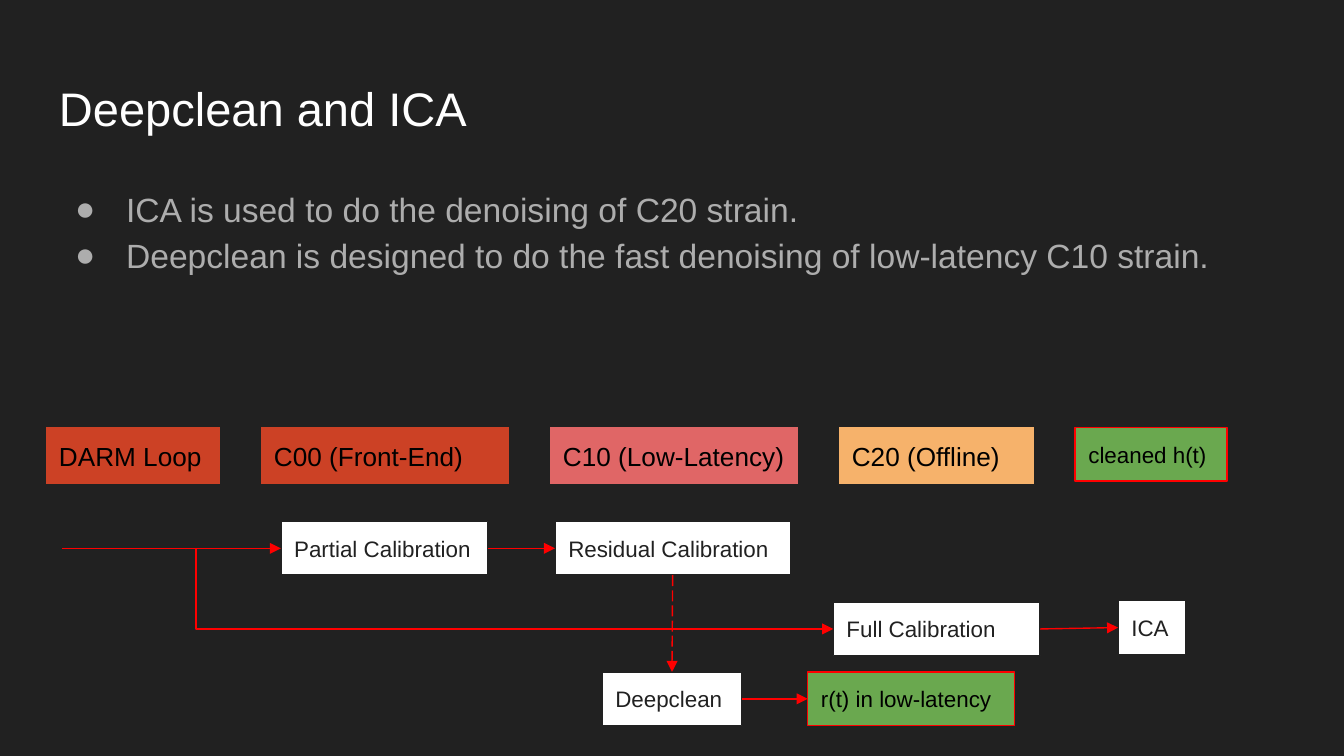
from lxml import etree
from pptx import Presentation
from pptx.dml.color import RGBColor
from pptx.enum.dml import MSO_LINE
from pptx.enum.shapes import MSO_CONNECTOR as CONNECTOR, MSO_SHAPE
from pptx.enum.text import MSO_ANCHOR, PP_ALIGN
from pptx.oxml.ns import qn
from pptx.util import Inches, Pt

DARK, WHITE, BLACK, GREY = "212121", "FFFFFF", "000000", "ADADAD"
RED, GREEN, BRICK, ROSE, ORANGE = "FF0000", "6AA84F", "CC4125", "E06666", "F6B26B"

TITLE = "Deepclean and ICA"
BULLETS = [
    "ICA is used to do the denoising of C20 strain.",
    "Deepclean is designed to do the fast denoising of low-latency C10 strain.",
]

STAGE_LEFT, STAGE_GAP = 0.34, 0.3
# text, width, top, height, fill, line, size
STAGES = [
    ("DARM Loop", 1.3, 3.17, 0.44, BRICK, DARK, 14),
    ("C00 (Front-End)", 1.85, 3.17, 0.44, BRICK, DARK, 14),
    ("C10 (Low-Latency)", 1.85, 3.17, 0.44, ROSE, DARK, 14),
    ("C20 (Offline)", 1.46, 3.17, 0.44, ORANGE, DARK, 14),
    ("cleaned h(t)", 1.13, 3.18, 0.4, GREEN, RED, 12),
]

STEP_HEIGHT = 0.4
# text, left, top, width, fill, line, text colour
STEPS = [
    ("Partial Calibration", 2.09, 3.88, 1.54, WHITE, DARK, DARK),
    ("Residual Calibration", 4.13, 3.88, 1.75, WHITE, DARK, DARK),
    ("Full Calibration", 6.2, 4.48, 1.54, WHITE, DARK, DARK),
    ("ICA", 8.32, 4.47, 0.5, WHITE, DARK, DARK),
    ("Deepclean", 4.48, 5, 1.04, WHITE, DARK, DARK),
    ("r(t) in low-latency", 6.01, 5, 1.54, GREEN, RED, BLACK),
]

TOP, LEFT, BOTTOM, RIGHT = range(4)
# from step, side, to step, side, dash
LINKS = [
    ("Partial Calibration", RIGHT, "Residual Calibration", LEFT, None),
    ("Full Calibration", RIGHT, "ICA", LEFT, None),
    ("Deepclean", RIGHT, "r(t) in low-latency", LEFT, None),
    ("Residual Calibration", BOTTOM, "Deepclean", TOP, MSO_LINE.LONG_DASH),
]
INPUT_LEFT, BRANCH_LEFT, INPUT_Y, BRANCH_Y = 0.46, 1.46, 4.08, 4.68


def color(hex_value):
    return RGBColor.from_string(hex_value)


def set_font(paragraph, size, hex_value):
    for name, value in {"name": "Arial", "size": Pt(size)}.items():
        setattr(paragraph.font, name, value)
    paragraph.font.color.rgb = color(hex_value)


def set_frame(frame, anchor):
    margins = {f"margin_{side}": Inches(0.1) for side in ("left", "right", "top", "bottom")}
    for name, value in {"word_wrap": True, "vertical_anchor": anchor, **margins}.items():
        setattr(frame, name, value)


def add_text(left, top, width, height):
    frame = slide.shapes.add_textbox(*map(Inches, (left, top, width, height))).text_frame
    set_frame(frame, MSO_ANCHOR.TOP)
    return frame


def add_bullet(paragraph):
    properties = paragraph._p.get_or_add_pPr()
    properties.set("marL", str(Inches(0.5)))
    properties.set("indent", str(Inches(-0.38)))
    bullet_color = etree.SubElement(properties, qn("a:buClr"))
    etree.SubElement(bullet_color, qn("a:srgbClr"), val=GREY)
    etree.SubElement(properties, qn("a:buFont"), typeface="Arial")
    etree.SubElement(properties, qn("a:buChar"), char="●")


def add_box(text, left, top, width, height, fill, line, size, text_color):
    shape = slide.shapes.add_shape(
        MSO_SHAPE.RECTANGLE, *map(Inches, (left, top, width, height)))
    shape.shadow.inherit = False
    shape.fill.solid()
    shape.fill.fore_color.rgb = color(fill)
    shape.line.color.rgb = color(line)
    shape.line.width = Pt(0.75)
    set_frame(shape.text_frame, MSO_ANCHOR.MIDDLE)
    paragraph = shape.text_frame.paragraphs[0]
    paragraph.text = text
    paragraph.alignment = PP_ALIGN.LEFT
    set_font(paragraph, size, text_color)
    return shape


def add_arrow(kind=CONNECTOR.STRAIGHT, start=(0, 0), end=(0, 0), dash=None):
    connector = slide.shapes.add_connector(kind, *map(Inches, (*start, *end)))
    connector.line.color.rgb = color(RED)
    connector.line.width = Pt(0.75)
    if dash:
        connector.line.dash_style = dash
    etree.SubElement(connector.line._get_or_add_ln(), qn("a:tailEnd"), type="triangle")
    etree.SubElement(connector._element.spPr, qn("a:effectLst"))
    return connector


presentation = Presentation()
presentation.slide_width = Inches(10)
presentation.slide_height = presentation.slide_width * 9 // 16
slide = presentation.slides.add_slide(presentation.slide_layouts[6])
slide.background.fill.solid()
slide.background.fill.fore_color.rgb = color(DARK)

title = add_text(0.34, 0.49, 9.32, 0.63).paragraphs[0]
title.text = TITLE
set_font(title, 25.2, WHITE)

body = add_text(0.34, 1.26, 9.32, 3.74)
for index, text in enumerate(BULLETS):
    paragraph = body.add_paragraph() if index else body.paragraphs[0]
    paragraph.text = text
    paragraph.line_spacing = 1.15
    add_bullet(paragraph)
    set_font(paragraph, 18, GREY)

left = STAGE_LEFT
for text, width, top, height, fill, line, size in STAGES:
    add_box(text, left, top, width, height, fill, line, size, BLACK)
    left += width + STAGE_GAP

boxes = {}
for text, left, top, width, fill, line, text_color in STEPS:
    boxes[text] = add_box(text, left, top, width, STEP_HEIGHT, fill, line, 12, text_color)

for source, source_side, target, target_side, dash in LINKS:
    arrow = add_arrow(dash=dash)
    arrow.begin_connect(boxes[source], source_side)
    arrow.end_connect(boxes[target], target_side)

input_arrow = add_arrow(start=(INPUT_LEFT, INPUT_Y), end=(2.09, INPUT_Y))
input_arrow.end_connect(boxes["Partial Calibration"], LEFT)

# The branch drops straight down first, so its bend sits at 0.
branch = add_arrow(CONNECTOR.ELBOW, (BRANCH_LEFT, INPUT_Y), (6.2, BRANCH_Y))
adjustments = branch._element.spPr.find(qn("a:prstGeom")).find(qn("a:avLst"))
etree.SubElement(adjustments, qn("a:gd"), name="adj1", fmla="val 0")

presentation.save("out.pptx")
